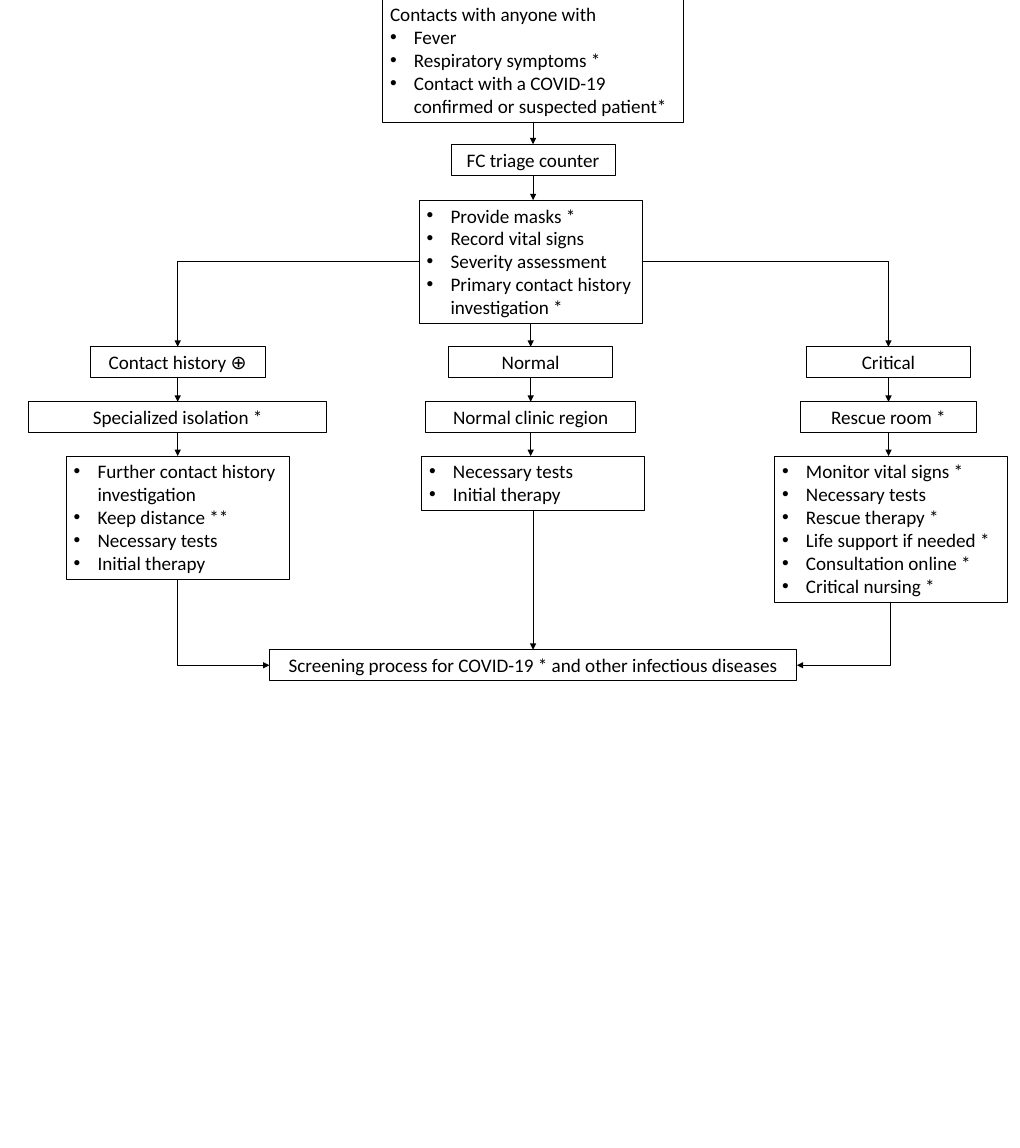
from lxml import etree
from pptx import Presentation
from pptx import util as u
from pptx.dml.color import RGBColor
from pptx.enum import shapes, text
from pptx.oxml import ns

PX = 9525
BLACK = RGBColor(0x00, 0x00, 0x00)
FONT = "Calibri"
BULLET_INDENT = 30
LABEL_HEIGHT = 39
BRANCH_TOP, PLACE_TOP, CARE_TOP = 435, 504, 572
BOTTOM, TOP = 2, 0


def px(value):
    return u.Emu(value * PX)


def add_box(slide, left, top, width, height):
    box = slide.shapes.add_textbox(px(left), px(top), px(width), px(height))
    box.line.color.rgb = BLACK
    box.line.width = u.Pt(0.75)
    box.text_frame.word_wrap = True
    box.text_frame.auto_size = text.MSO_AUTO_SIZE.SHAPE_TO_FIT_TEXT
    return box


def write(paragraph, words):
    run = paragraph.add_run()
    run.text = words
    run.font.name = FONT
    run.font.size = u.Pt(18)
    run.font.color.rgb = BLACK


def add_bullet(paragraph):
    properties = paragraph._p.get_or_add_pPr()
    properties.set("marL", str(px(BULLET_INDENT)))
    properties.set("indent", str(px(-BULLET_INDENT)))
    etree.SubElement(properties, ns.qn("a:buFont")).set("typeface", "Arial")
    etree.SubElement(properties, ns.qn("a:buChar")).set("char", "•")


def add_label(slide, words, left, top, width):
    box = add_box(slide, left, top, width, LABEL_HEIGHT)
    paragraph = box.text_frame.paragraphs[0]
    paragraph.alignment = text.PP_ALIGN.CENTER
    write(paragraph, words)
    return box


def add_list(slide, items, left, top, width, height, heading=None):
    box = add_box(slide, left, top, width, height)
    lines = ([heading] if heading else []) + items
    for index, words in enumerate(lines):
        frame = box.text_frame
        paragraph = frame.add_paragraph() if index else frame.paragraphs[0]
        if words != heading:
            add_bullet(paragraph)
        write(paragraph, words)
    return box


def add_arrow(slide, kind, begin, end):
    connector = slide.shapes.add_connector(kind, *begin, *end)
    connector.line.color.rgb = BLACK
    connector.line.width = u.Pt(1)
    properties = connector._element.spPr
    line = properties.find(ns.qn("a:ln"))
    etree.SubElement(line, ns.qn("a:tailEnd")).set("type", "triangle")
    etree.SubElement(properties, ns.qn("a:effectLst"))
    return connector


def middle(box):
    return box.left + box.width // 2, box.top + box.height // 2


def add_down_arrow(slide, upper, lower):
    x = middle(upper)[0]
    begin = (x, upper.top + upper.height)
    arrow = add_arrow(slide, shapes.MSO_CONNECTOR.STRAIGHT, begin, (x, lower.top))
    arrow.begin_connect(upper, BOTTOM)
    if middle(lower)[0] == x:
        arrow.end_connect(lower, TOP)


def add_elbow(slide, begin, end):
    elbow = add_arrow(slide, shapes.MSO_CONNECTOR.ELBOW, begin, end)
    properties = elbow._element.spPr
    properties.find(ns.qn("a:prstGeom")).set("prst", "bentConnector2")
    return properties.find(ns.qn("a:xfrm"))


def add_side_then_down(slide, source, target):
    x, y = middle(source)
    target_x = middle(target)[0]
    side = source.left if target_x < x else source.left + source.width
    add_elbow(slide, (side, y), (target_x, target.top))


def add_down_then_side(slide, source, target):
    x, y = middle(source)[0], source.top + source.height
    target_x, target_y = middle(target)
    side = target.left if x < target_x else target.left + target.width
    center_x, center_y = (x + side) // 2, (y + target_y) // 2
    half_run, half_drop = (side - x) // 2, (target_y - y) // 2
    frame = add_elbow(
        slide,
        (center_x - half_drop, center_y + half_run),
        (center_x + half_drop, center_y - half_run),
    )
    frame.set("rot", str(90 * 60000))


def main():
    presentation = Presentation()
    presentation.slide_width = px(1280)
    presentation.slide_height = px(1440)
    slide = presentation.slides.add_slide(presentation.slide_layouts[6])

    contacts = add_list(
        slide,
        ["Fever", "Respiratory symptoms *",
         "Contact with a COVID-19 confirmed or suspected patient*"],
        480, -2, 378, 155, heading="Contacts with anyone with",
    )
    triage = add_label(slide, "FC triage counter", 566, 181, 206)
    assessment = add_list(
        slide,
        ["Provide masks *", "Record vital signs", "Severity assessment",
         "Primary contact history investigation *"],
        526, 251, 280, 155,
    )
    history = add_label(slide, "Contact history ⊕", 113, BRANCH_TOP, 220)
    normal = add_label(slide, "Normal", 563, BRANCH_TOP, 206)
    critical = add_label(slide, "Critical", 1012, BRANCH_TOP, 206)
    isolation = add_label(slide, "Specialized isolation *", 36, PLACE_TOP, 374)
    clinic = add_label(slide, "Normal clinic region", 534, PLACE_TOP, 264)
    rescue = add_label(slide, "Rescue room *", 1005, PLACE_TOP, 220)
    isolation_care = add_list(
        slide,
        ["Further contact history investigation", "Keep distance **",
         "Necessary tests", "Initial therapy"],
        83, CARE_TOP, 280, 155,
    )
    clinic_care = add_list(
        slide, ["Necessary tests", "Initial therapy"], 529, CARE_TOP, 280, 68
    )
    rescue_care = add_list(
        slide,
        ["Monitor vital signs *", "Necessary tests", "Rescue therapy *",
         "Life support if needed *", "Consultation online *",
         "Critical nursing *"],
        972, CARE_TOP, 292, 184,
    )
    screening = add_label(
        slide, "Screening process for COVID-19 * and other infectious diseases",
        338, 815, 662,
    )

    for upper, lower in [
        (contacts, triage), (triage, assessment), (assessment, normal),
        (history, isolation), (isolation, isolation_care),
        (normal, clinic), (clinic, clinic_care), (clinic_care, screening),
        (critical, rescue), (rescue, rescue_care),
    ]:
        add_down_arrow(slide, upper, lower)
    for branch in (history, critical):
        add_side_then_down(slide, assessment, branch)
    for care in (isolation_care, rescue_care):
        add_down_then_side(slide, care, screening)

    presentation.save("out.pptx")


if __name__ == "__main__":
    main()
